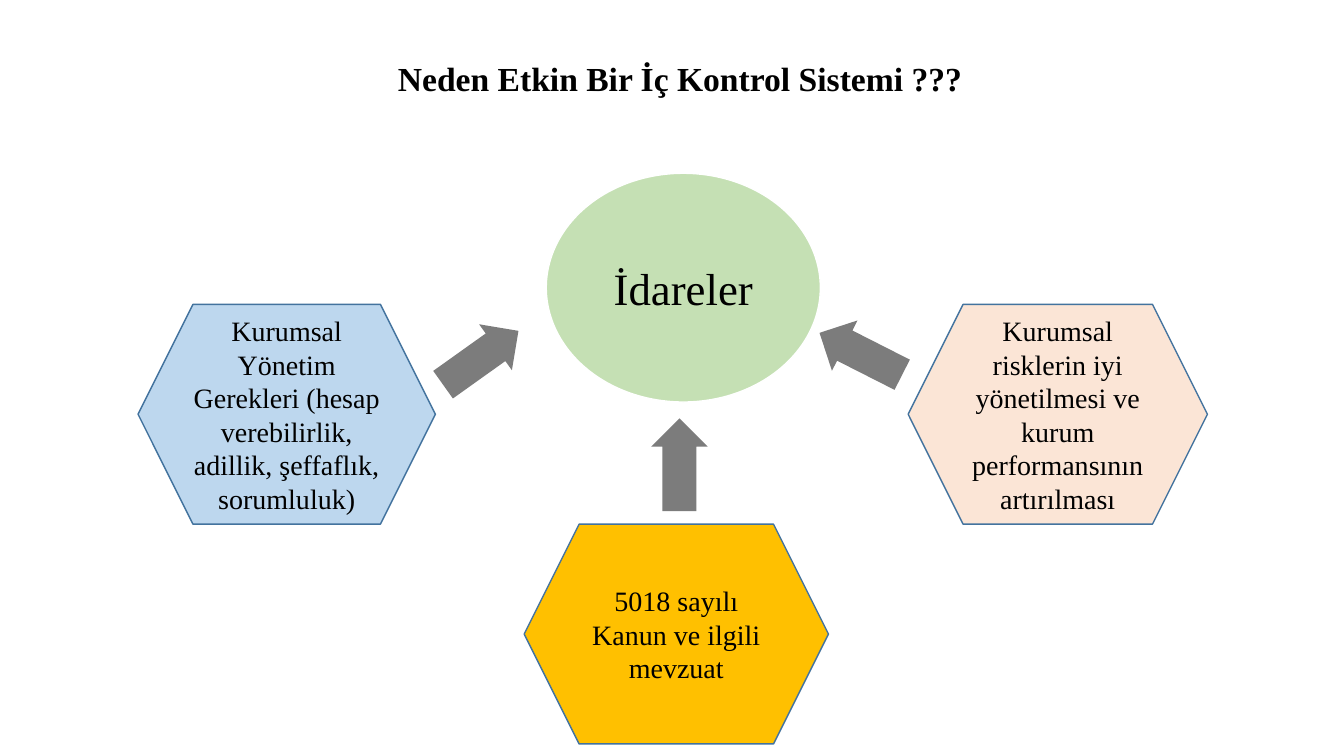
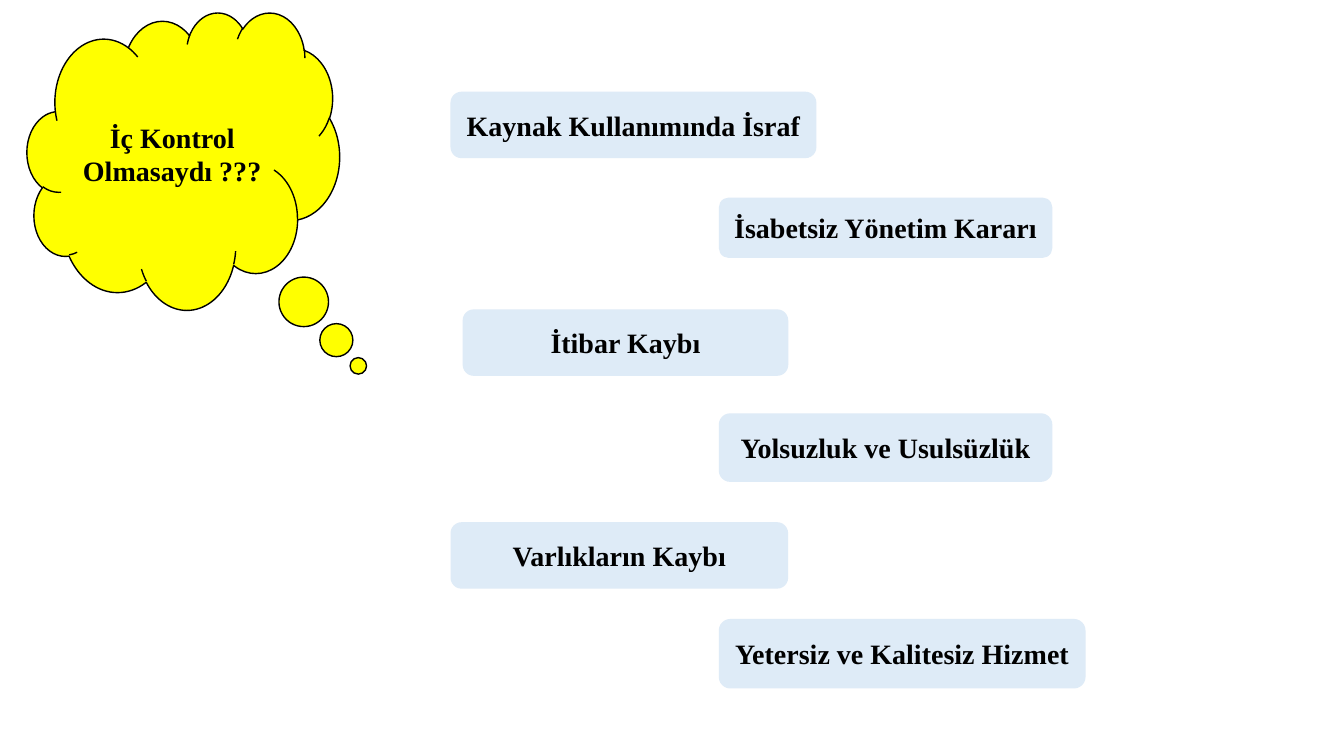
from dataclasses import dataclass

from pptx import Presentation
from pptx.dml.color import RGBColor
from pptx.enum.shapes import MSO_SHAPE as Shp
from pptx.enum.text import MSO_ANCHOR as Anchor, PP_ALIGN as Align
from pptx.util import Pt

# Shared style
FONT = "Times New Roman"
BLACK, WHITE, GREY = "000000", "FFFFFF", "7C7C7C"
GREEN, BLUE, GOLD, PEACH = "C5E0B4", "BDD7EE", "FFC000", "FBE5D6"
YELLOW, PALE, OUTLINE = "FFFF00", "DEEBF7", "43739E"


@dataclass
class Item:
    kind: Shp
    x: float
    y: float
    w: float
    h: float
    fill: str
    line: str | None = None
    text: str = ""
    size: float = 20
    bold: bool = False
    rotation: float = 0
    adj: tuple[float, ...] = ()


def rgb(code: str) -> RGBColor:
    return RGBColor.from_string(code)


def write(shape, text: str, size: float, bold: bool, spacing: float = 1) -> None:
    tf = shape.text_frame
    tf.word_wrap = True
    tf.vertical_anchor = Anchor.MIDDLE
    p = tf.paragraphs[0]
    p.alignment = Align.CENTER
    p.line_spacing = spacing
    r = p.add_run()
    r.text = text
    for name, value in {"name": FONT, "size": Pt(size), "bold": bold}.items():
        setattr(r.font, name, value)
    r.font.color.rgb = rgb(BLACK)


def draw(s, item: Item) -> None:
    sp = s.shapes.add_shape(item.kind, Pt(item.x), Pt(item.y), Pt(item.w), Pt(item.h))
    sp.shadow.inherit = False
    sp.rotation = item.rotation
    for i, value in enumerate(item.adj):
        sp.adjustments[i] = value
    sp.fill.solid()
    sp.fill.fore_color.rgb = rgb(item.fill)
    if item.line:
        sp.line.color.rgb = rgb(item.line)
        sp.line.width = Pt(1)
    else:
        sp.line.fill.background()
    if item.text:
        write(sp, item.text, item.size, item.bold)


def hexagon(x: float, y: float, w: float, fill: str, text: str) -> Item:
    return Item(Shp.HEXAGON, x, y, w, 157, fill, OUTLINE, text)


def arrow(x: float, y: float, rotation: float) -> Item:
    return Item(Shp.LEFT_ARROW, x, y, 66.2, 40.3, GREY, rotation=rotation, adj=(0.6, 0.5))


def card(x: float, y: float, w: float, h: float, text: str) -> Item:
    return Item(Shp.FLOWCHART_ALTERNATE_PROCESS, x, y, w, h, PALE, text=text, bold=True)


REASONS = [
    # Centre
    Item(Shp.OVAL, 390.2, 123.8, 195.8, 163.4, GREEN, WHITE, "İdareler", 32),
    # Reasons around it
    hexagon(98.6, 217.4, 212.4, BLUE,
            "Kurumsal Yönetim Gerekleri (hesap verebilirlik, adillik, şeffaflık, sorumluluk)"),
    hexagon(374.4, 374.4, 217.4, GOLD, "5018 sayılı Kanun ve ilgili mevzuat"),
    hexagon(648.7, 217.4, 213.8, PEACH,
            "Kurumsal risklerin iyi yönetilmesi ve kurum performansının artırılması"),
    # Arrows to the centre
    arrow(581.8, 232.6, 26.9),
    arrow(310.3, 235.4, 144.5),
    arrow(452.2, 311.8, 90),
]

LEFT, RIGHT = 321.8, 513.4
RISKS = [
    # Question
    Item(Shp.CLOUD_CALLOUT, 19.4, 8.6, 223.2, 212.4, YELLOW, BLACK,
         "İç Kontrol Olmasaydı ???", bold=True, adj=(0.56, 0.69)),
    # Consequences
    card(LEFT, 65.5, 261.4, 47.5, "Kaynak Kullanımında İsraf"),
    card(RIGHT, 141.1, 238.3, 43.2, "İsabetsiz Yönetim Kararı"),
    card(330.5, 221, 232.6, 47.5, "İtibar Kaybı"),
    card(RIGHT, 295.2, 238.3, 49, "Yolsuzluk ve Usulsüzlük"),
    card(LEFT, 373, 241.2, 47.5, "Varlıkların Kaybı"),
    card(RIGHT, 442.1, 262, 49.7, "Yetersiz ve Kalitesiz Hizmet"),
]


def add_slide(prs, items: list[Item], title: str = "") -> None:
    s = prs.slides.add_slide(prs.slide_layouts[6])
    if title:
        box = s.shapes.add_textbox(Pt(39), Pt(37.5), Pt(893.5), Pt(39.5))
        write(box, title, 24, True, 0.9)
    for item in items:
        draw(s, item)


def main() -> None:
    prs = Presentation()
    prs.slide_width, prs.slide_height = Pt(960), Pt(540)
    add_slide(prs, REASONS, "Neden Etkin Bir İç Kontrol Sistemi ???")
    add_slide(prs, RISKS)
    prs.save("out.pptx")


if __name__ == "__main__":
    main()
